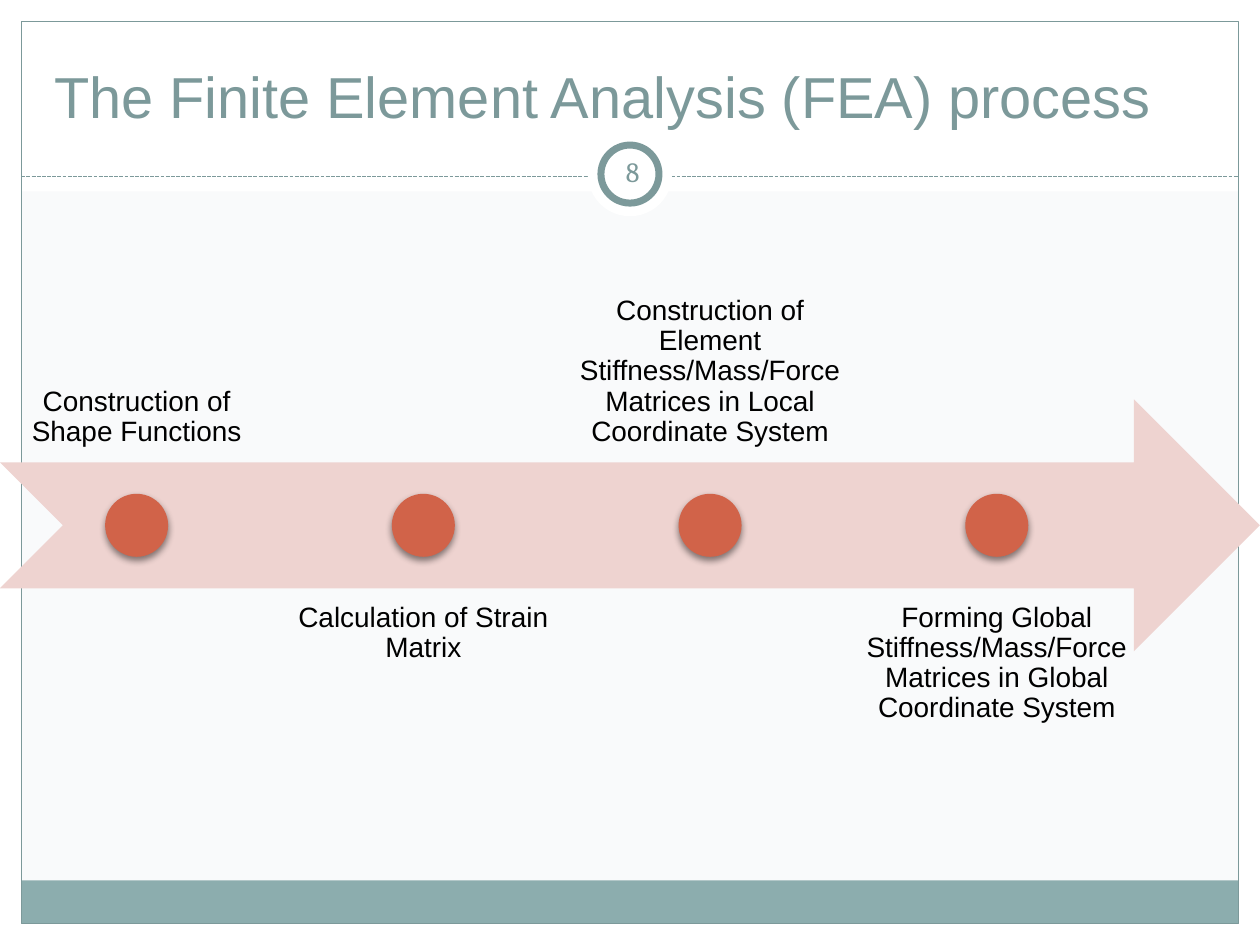
from lxml.etree import SubElement as Sub
from pptx import Presentation
from pptx.dml.color import RGBColor as Rgb
from pptx.enum.dml import MSO_LINE as Dash
from pptx.enum.shapes import MSO_CONNECTOR as Link, MSO_SHAPE as Kind
from pptx.enum.text import MSO_ANCHOR as Anchor, PP_ALIGN as Align
from pptx.oxml.ns import qn
from pptx.util import Cm, Pt

TITLE = "The Finite Element Analysis (FEA) process"
NUMBER = "8"
STEPS = [
    "Construction of Shape Functions",
    "Calculation of Strain Matrix",
    "Construction of Element Stiffness/Mass/Force Matrices in Local Coordinate System",
    "Forming Global Stiffness/Mass/Force Matrices in Global Coordinate System",
]


class Theme:
    page, white, black = "F9FAFB", "FFFFFF", "000000"
    teal, band, arrow, dot = "7C999A", "8CADAE", "EED3D0", "D16349"
    sans, serif = "Arial", "Cambria"
    title, body = 33, 16
    thin, thick = 0.75, 4


WIDE, HIGH = 25.4, 19.05
EDGE = 0.43              # white margin round the frame
HEAD = 3.86              # height of the white title area
RULE = 3.56              # dashed line under the title
MID = WIDE / 2
ROW = 10.59              # centre of the arrow
ARROW = 5.08
STEP, BOX, TALL = 5.78, 5.51, 5.08
DOT, GAP = 1.27, 0.3


def paint(line, color, width):
    line.color.rgb = Rgb.from_string(color)
    line.width = Pt(width)


def shape(kind, x, y, w, h, fill=None, line=None, width=Theme.thin):
    item = slide.shapes.add_shape(kind, Cm(x), Cm(y), Cm(w), Cm(h))
    item.shadow.inherit = False
    if fill:
        item.fill.solid()
        item.fill.fore_color.rgb = Rgb.from_string(fill)
    else:
        item.fill.background()
    if line:
        paint(item.line, line, width)
    else:
        item.line.fill.background()
    return item


def disc(x, y, size, fill, **style):
    """Draw a circle about the centre (x, y)."""
    return shape(Kind.OVAL, x - size / 2, y - size / 2, size, size, fill, **style)


def shade(item):
    """Give the shape a soft shadow straight below it."""
    effects = item._element.spPr.find(qn("a:effectLst"))
    outer = Sub(effects, qn("a:outerShdw"), blurRad=str(Pt(4)), dist=str(Pt(2)),
                dir="5400000", algn="ctr", rotWithShape="0")
    color = Sub(outer, qn("a:srgbClr"), val=Theme.black)
    Sub(color, qn("a:alpha"), val="45000")


def text(words, x, y, w, h, size=Theme.body, font=Theme.sans, color=Theme.black,
         align=Align.CENTER, anchor=Anchor.TOP, pads=(0, 0, 0, 0), lead=1.0):
    """Add a text box; pads run left, top, right, bottom."""
    box = slide.shapes.add_textbox(Cm(x), Cm(y), Cm(w), Cm(h))
    frame = box.text_frame
    frame.word_wrap = True
    frame.vertical_anchor = anchor
    (frame.margin_left, frame.margin_top,
     frame.margin_right, frame.margin_bottom) = map(Cm, pads)
    para = frame.paragraphs[0]
    para.alignment, para.line_spacing = align, lead
    run = para.add_run()
    run.text = words
    run.font.size, run.font.name = Pt(size), font
    run.font.color.rgb = Rgb.from_string(color)


def base():
    """Draw the margins, frame, footer band, title and page number."""
    fill = slide.background.fill
    fill.solid()
    fill.fore_color.rgb = Rgb.from_string(Theme.page)
    for area in [(0, HIGH - EDGE, WIDE, EDGE), (0, 0, WIDE, HEAD),
                 (0, 0, EDGE, HIGH), (WIDE - EDGE, 0, EDGE, HIGH)]:
        shape(Kind.RECTANGLE, *area, fill=Theme.white)
    inner = WIDE - 2 * EDGE
    shape(Kind.RECTANGLE, EDGE, 17.75, inner, 0.87, fill=Theme.band)
    shape(Kind.RECTANGLE, EDGE, EDGE, inner, HIGH - 2 * EDGE, line=Theme.teal)

    rule = slide.shapes.add_connector(
        Link.STRAIGHT, Cm(EDGE), Cm(RULE), Cm(WIDE - EDGE), Cm(RULE))
    paint(rule.line, Theme.teal, Theme.thin)
    rule.line.dash_style = Dash.SQUARE_DOT
    Sub(rule._element.spPr, qn("a:effectLst"))

    disc(MID, 3.51, 1.7, Theme.white)
    disc(MID, 3.51, 1.17, Theme.white, line=Theme.teal, width=Theme.thick)
    text(TITLE, 0.84, 0.64, 23.7, 2.11, size=Theme.title, color=Theme.teal,
         align=Align.LEFT, anchor=Anchor.BOTTOM, pads=(0.25, 0.13, 0.25, 0.13))
    text(NUMBER, 12.12, 2.85, 1.27, 1.22, font=Theme.serif, color=Theme.teal,
         anchor=Anchor.MIDDLE, pads=(0.13,) * 4)


def process():
    """Place the steps along the arrow, in turn above and below it."""
    shape(Kind.NOTCHED_RIGHT_ARROW, 0, ROW - ARROW / 2, WIDE, ARROW, fill=Theme.arrow)
    for i, words in enumerate(STEPS):
        x = i * STEP
        if i % 2:
            y, anchor, pads = ROW + ARROW / 4, Anchor.TOP, (0, GAP, 0, 0)
        else:
            y, anchor, pads = ROW - ARROW / 4 - TALL, Anchor.BOTTOM, (0, 0, 0, GAP)
        text(words, x, y, BOX, TALL, anchor=anchor, pads=pads, lead=0.9)
        shade(disc(x + BOX / 2, ROW, DOT, Theme.dot))


deck = Presentation()
deck.slide_width, deck.slide_height = Cm(WIDE), Cm(HIGH)
slide = deck.slides.add_slide(deck.slide_layouts[6])
base()
process()
deck.save("out.pptx")
